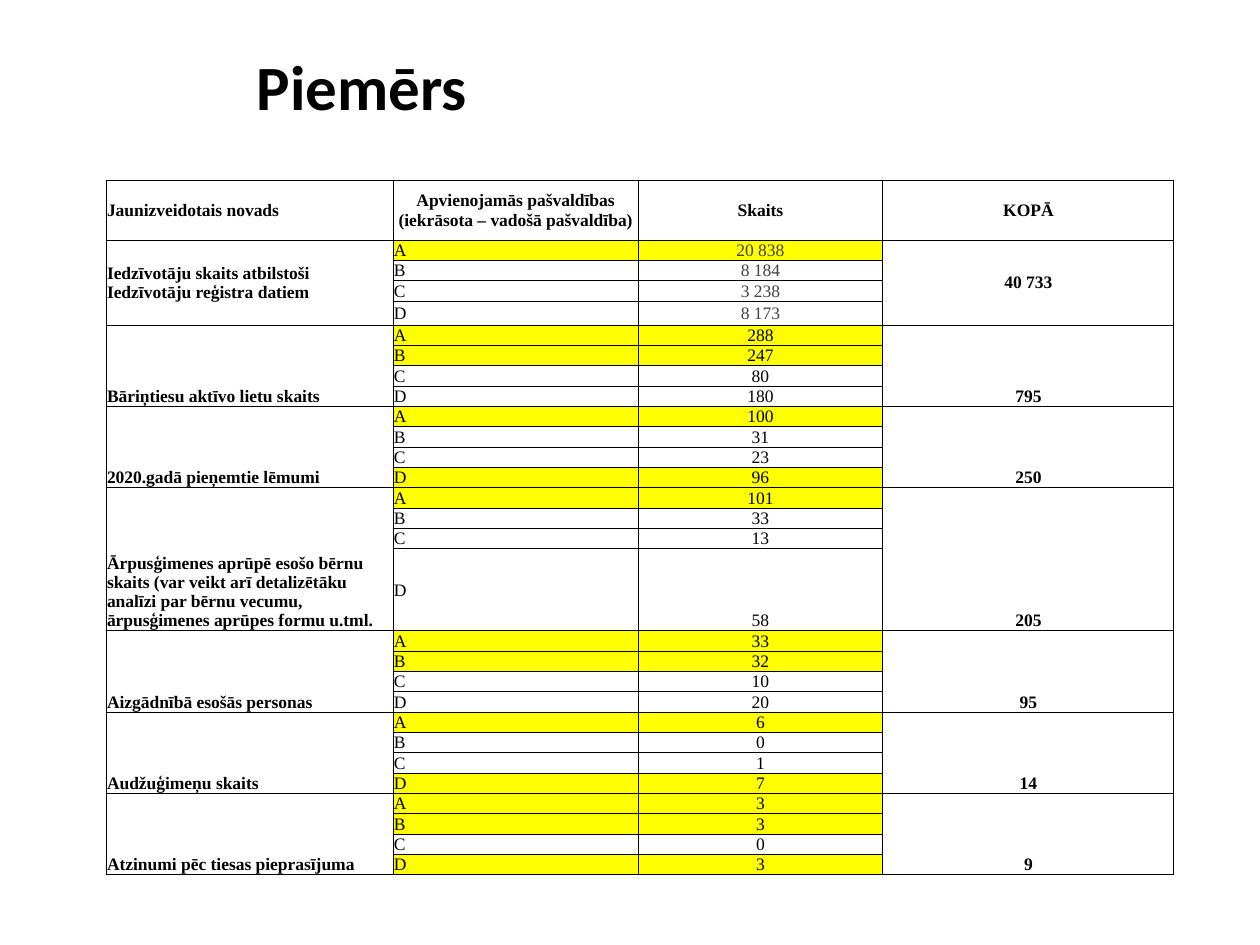
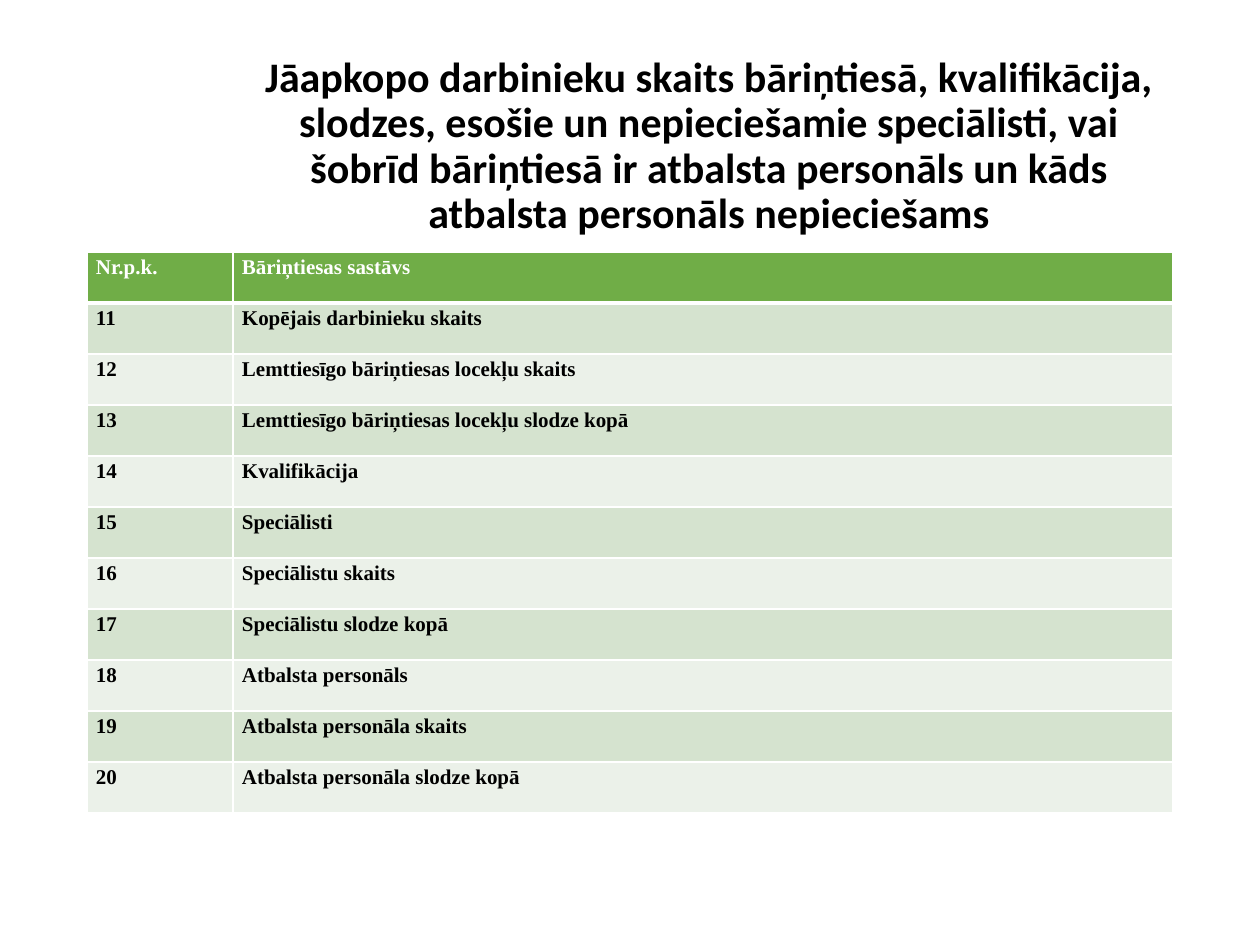
from lxml import etree
from pptx import Presentation
from pptx import util as u
from pptx.dml.color import RGBColor
from pptx.enum import text
from pptx.oxml.ns import qn

EMU_PER_PX = 914400 / 126
TITLE_FONT, TABLE_FONT = "Calibri", "Times New Roman"
BLACK, WHITE, GREY = "000000", "FFFFFF", "414142"
YELLOW, GREEN, BANDS = "FFFF00", "70AD47", ("D5E3CF", "EBF1E9")
LEFT, CENTER = text.PP_ALIGN.LEFT, text.PP_ALIGN.CENTER
TOP, MIDDLE, BOTTOM = (text.MSO_ANCHOR.TOP, text.MSO_ANCHOR.MIDDLE,
                       text.MSO_ANCHOR.BOTTOM)

EXAMPLE_HEADERS = ("Jaunizveidotais novads",
                   "Apvienojamās pašvaldības (iekrāsota – vadošā pašvaldība)",
                   "Skaits", "KOPĀ")
MUNICIPALITIES = "ABCD"
# Label, count for each municipality, total, highlighted municipalities
INDICATORS = (
    ("Iedzīvotāju skaits atbilstoši Iedzīvotāju reģistra datiem",
     ("20 838", "8 184", "3 238", "8 173"), "40 733", "A"),
    ("Bāriņtiesu aktīvo lietu skaits", (288, 247, 80, 180), 795, "AB"),
    ("2020.gadā pieņemtie lēmumi", (100, 31, 23, 96), 250, "AD"),
    ("Ārpusģimenes aprūpē esošo bērnu skaits (var veikt arī detalizētāku "
     "analīzi par bērnu vecumu, ārpusģimenes aprūpes formu u.tml.",
     (101, 33, 13, 58), 205, "A"),
    ("Aizgādnībā esošās personas", (33, 32, 10, 20), 95, "AB"),
    ("Audžuģimeņu skaits", (6, 0, 1, 7), 14, "AD"),
    ("Atzinumi pēc tiesas pieprasījuma", (3, 3, 0, 3), 9, "ABD"),
)
STAFF_TITLE = ("Jāapkopo darbinieku skaits bāriņtiesā, kvalifikācija, slodzes, "
               "esošie un nepieciešamie speciālisti, vai šobrīd bāriņtiesā ir "
               "atbalsta personāls un kāds atbalsta personāls nepieciešams")
STAFF_HEADERS = ("Nr.p.k.", "Bāriņtiesas sastāvs")
STAFF_ITEMS = (
    "Kopējais darbinieku skaits",
    "Lemttiesīgo bāriņtiesas locekļu skaits",
    "Lemttiesīgo bāriņtiesas locekļu slodze kopā",
    "Kvalifikācija",
    "Speciālisti",
    "Speciālistu skaits",
    "Speciālistu slodze kopā",
    "Atbalsta personāls",
    "Atbalsta personāla skaits",
    "Atbalsta personāla slodze kopā",
)


def px(length):
    return u.Emu(round(length * EMU_PER_PX))


def color(value):
    return RGBColor.from_string(value)


def set_font(paragraph, name, size, ink, bold):
    font = paragraph.font
    font.name, font.size, font.bold = name, u.Pt(size), bold
    font.color.rgb = color(ink)


def add_titled_slide(deck, words, height, size, align):
    page = deck.slides.add_slide(deck.slide_layouts[5])
    title = page.shapes.title
    title.left, title.top, title.width, title.height = map(px, (244, 50, 930, height))
    frame = title.text_frame
    frame.text = words
    frame.word_wrap = True
    frame.auto_size = text.MSO_AUTO_SIZE.NONE
    frame.vertical_anchor = TOP
    para = frame.paragraphs[0]
    para.alignment, para.line_spacing = align, 0.9
    set_font(para, TITLE_FONT, size, BLACK, True)
    return page


def add_grid(page, left, top, columns, rows):
    """Add a table whose column widths and row heights are given in px."""
    frame = page.shapes.add_table(len(rows), len(columns), px(left), px(top),
                                  px(sum(columns)), px(sum(rows)))
    table = frame.table
    table.first_row = table.horz_banding = False
    for column, width in zip(table.columns, columns):
        column.width = px(width)
    for row, height in zip(table.rows, rows):
        row.height = px(height)
    return table


def set_borders(cell, ink, **widths):
    """Draw the borders; widths in points are keyed L, R, T and B."""
    properties = cell._tc.get_or_add_tcPr()
    for side, width in widths.items():
        line = etree.SubElement(properties, qn(f"a:ln{side}"), w=str(u.Pt(width)))
        fill = etree.SubElement(line, qn("a:solidFill"))
        etree.SubElement(fill, qn("a:srgbClr"), val=ink)


def fill_cell(cell, words, size, fill=None, ink=BLACK, bold=True, align=LEFT,
              anchor=TOP, insets=(0, 0, 0, 0)):
    (cell.margin_left, cell.margin_top,
     cell.margin_right, cell.margin_bottom) = map(px, insets)
    cell.vertical_anchor = anchor
    if fill:
        cell.fill.solid()
        cell.fill.fore_color.rgb = color(fill)
    else:
        cell.fill.background()
    cell.text = str(words)
    para = cell.text_frame.paragraphs[0]
    para.alignment = align
    set_font(para, TABLE_FONT, size, ink, bold)
    return para


def fill_example_cell(cell, words, **look):
    set_borders(cell, BLACK, L=0.5, R=0.5, T=0.5, B=0.5)
    fill_cell(cell, words, 10, insets=(1, 1, 1, 0), **look)


def fill_indicator(table, first, indicator, anchor, count_ink):
    """Fill one group of rows, with its label and total merged down the side."""
    label, counts, total, highlighted = indicator
    last = first + len(counts) - 1
    for row, (name, count) in enumerate(zip(MUNICIPALITIES, counts), first):
        fill = YELLOW if name in highlighted else None
        side_words = (label, total) if row == first else ("", "")
        fill_example_cell(table.cell(row, 0), side_words[0], anchor=anchor)
        fill_example_cell(table.cell(row, 1), name, fill=fill, bold=False,
                          anchor=MIDDLE)
        fill_example_cell(table.cell(row, 2), count, fill=fill, ink=count_ink,
                          bold=False, align=CENTER, anchor=anchor)
        fill_example_cell(table.cell(row, 3), side_words[1], align=CENTER,
                          anchor=anchor)
    for column in (0, 3):
        table.cell(first, column).merge(table.cell(last, column))


def build_example(deck):
    page = add_titled_slide(deck, "Piemērs", 23, 36, LEFT)
    group_size = len(MUNICIPALITIES)
    rows = [60] + [20] * group_size * len(INDICATORS)
    rows[4], rows[16] = 24, 82
    table = add_grid(page, 106, 180, (287, 245, 245, 291), rows)
    for column, header in enumerate(EXAMPLE_HEADERS):
        fill_example_cell(table.cell(0, column), header, anchor=MIDDLE,
                          align=CENTER if column else LEFT)
    for index, indicator in enumerate(INDICATORS):
        fill_indicator(table, 1 + index * group_size, indicator,
                       BOTTOM if index else MIDDLE, BLACK if index else GREY)


def build_staff(deck):
    page = add_titled_slide(deck, STAFF_TITLE, 183, 24, CENTER)
    records = [STAFF_HEADERS, *enumerate(STAFF_ITEMS, 11)]
    table = add_grid(page, 87, 252, (146, 940), [51] * len(records))
    for row, record in enumerate(records):
        fill = BANDS[(row - 1) % 2] if row else GREEN
        for column, words in enumerate(record):
            cell = table.cell(row, column)
            set_borders(cell, WHITE, L=1, R=1, T=3 if row == 1 else 1,
                        B=1 if row else 3)
            para = fill_cell(cell, words, 12, fill, BLACK if row else WHITE,
                             insets=(9, 0, 9, 0))
            para.line_spacing, para.space_after = 1.15, u.Pt(10)


def main():
    deck = Presentation()
    deck.slide_width, deck.slide_height = px(1260), px(945)
    build_example(deck)
    build_staff(deck)
    deck.save("out.pptx")


if __name__ == "__main__":
    main()
